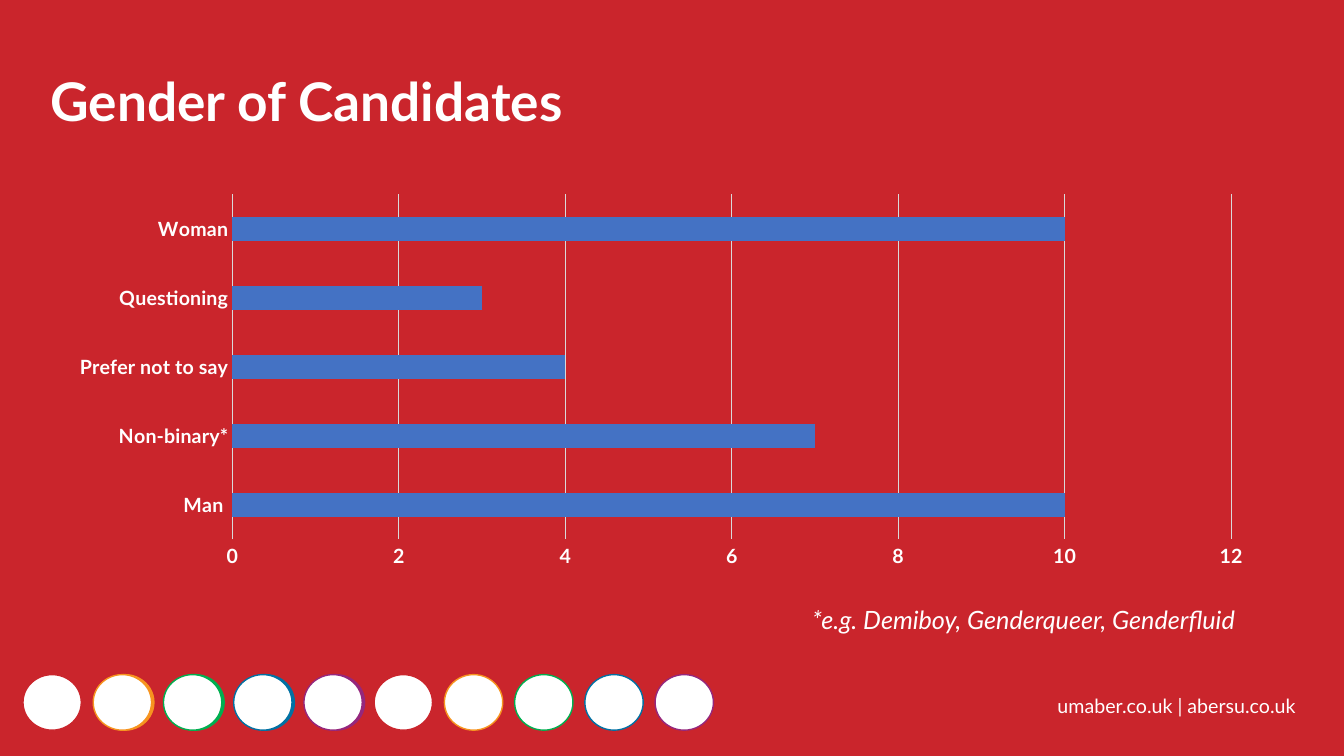
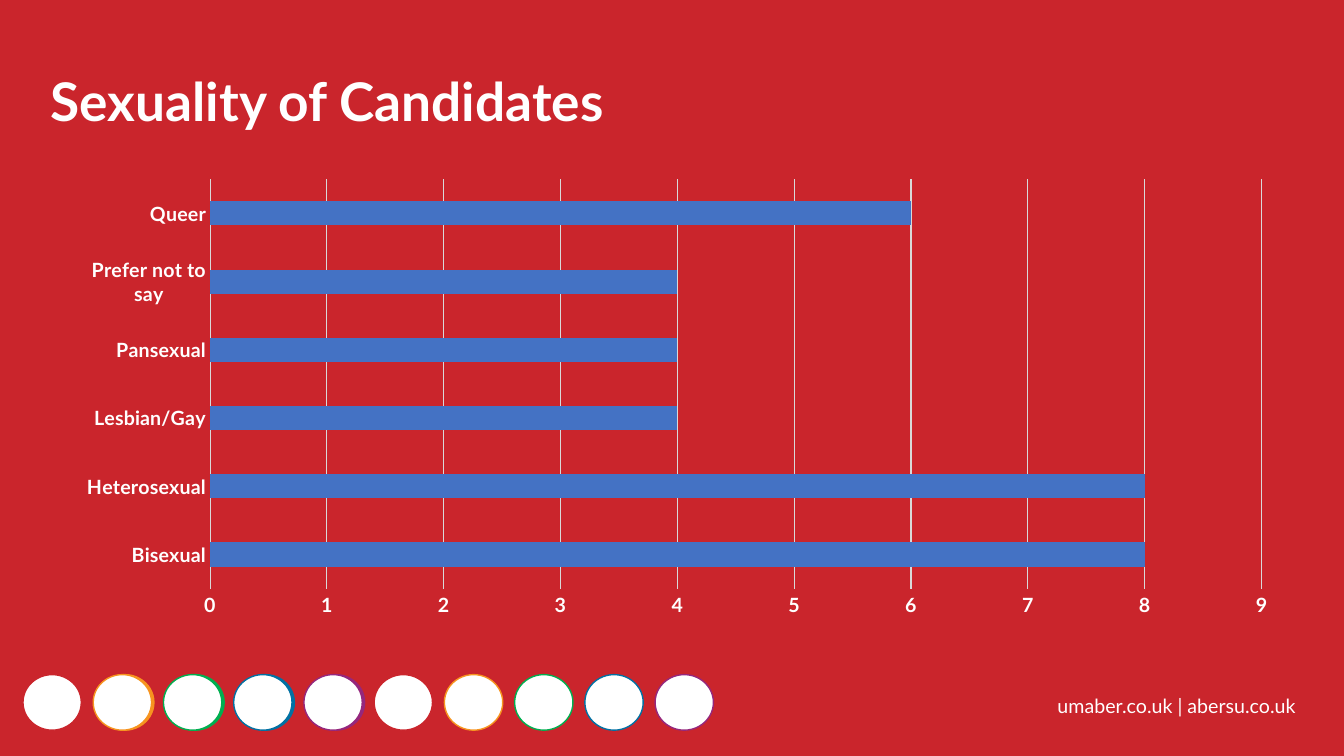
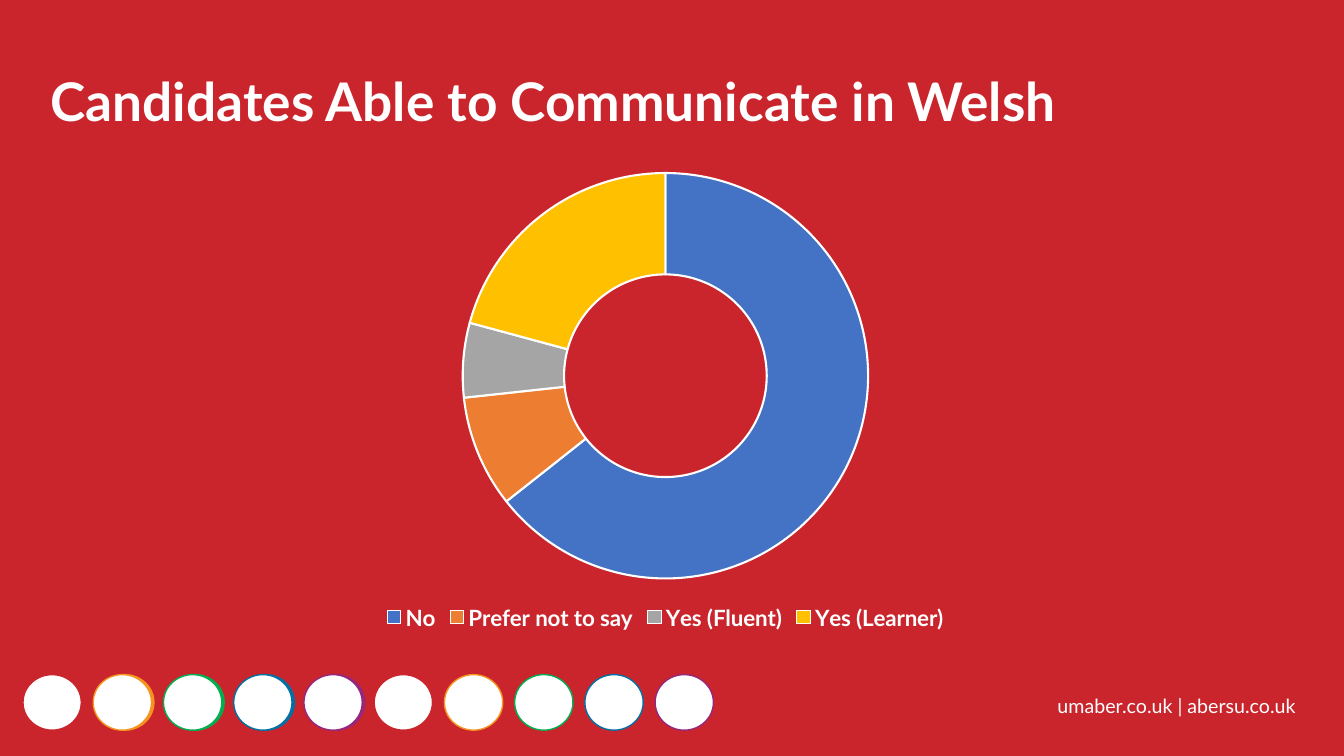
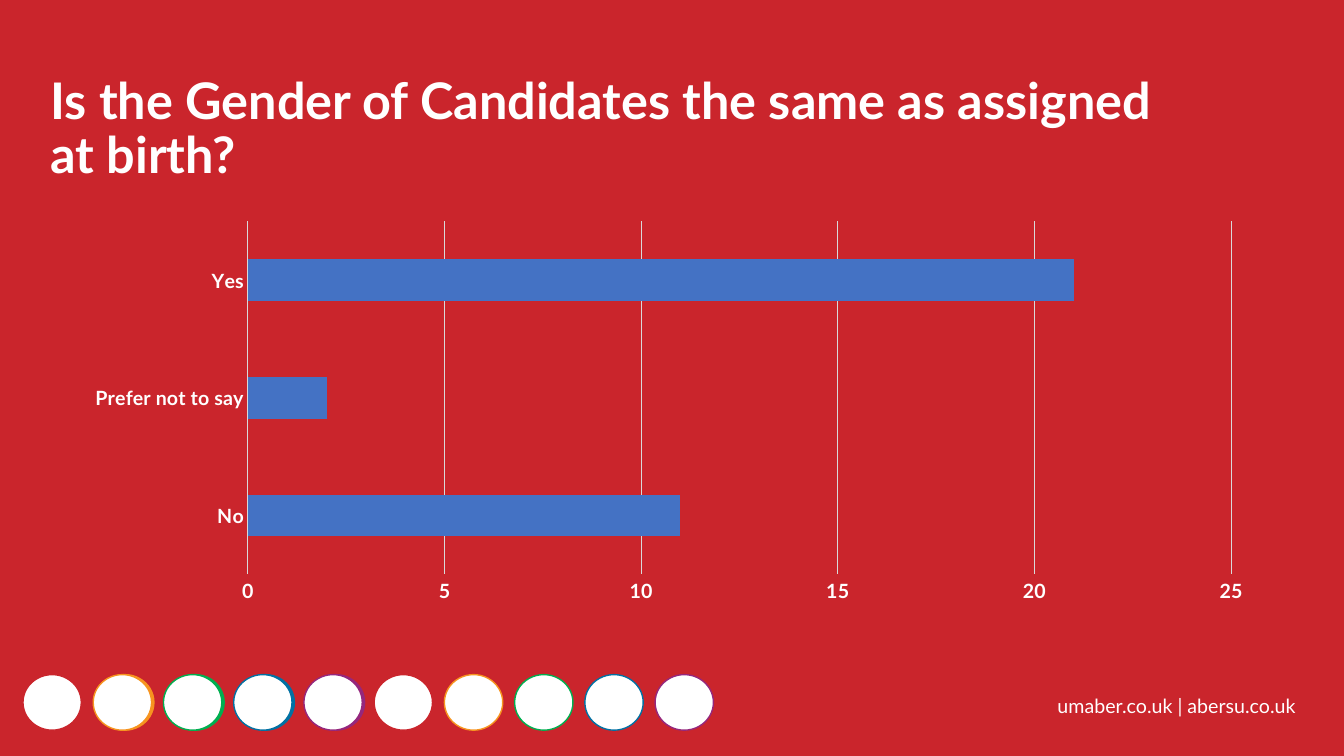
from pptx import Presentation
from pptx.chart.data import CategoryChartData
from pptx.dml.color import RGBColor
from pptx.enum import chart as kinds, shapes, text
from pptx.util import Cm, Pt

RED, WHITE, BLUE, GRID = "CA252C", "FFFFFF", "4472C4", "D9D9D9"
RAINBOW = [RED, "F7941F", "00AF50", "0171A3", "95277D"]
SLICES = [BLUE, "ED7D31", "A5A5A5", "FFC000"]
FONT = "Lato"


def rgb(value):
    return RGBColor.from_string(value)


def paint(fill, colour):
    fill.solid()
    fill.fore_color.rgb = rgb(colour)


def outline(line, colour, width):
    line.color.rgb = rgb(colour)
    line.width = Pt(width)


def style_font(font, size, bold=False, italic=False):
    font.name = FONT
    font.size = Pt(size)
    font.bold = bold
    font.italic = italic
    font.color.rgb = rgb(WHITE)


def add_label(page, box, words, size, italic=False):
    label = page.shapes.add_textbox(*map(Cm, box))
    frame = label.text_frame
    frame.word_wrap = True
    frame.text = words
    style_font(frame.paragraphs[0].runs[0].font, size, italic=italic)


def add_circles(page, left, top, fills, lines):
    pitch, width, height = 1.77, 1.47, 1.4
    for index, (fill, line) in enumerate(zip(fills, lines)):
        circle = page.shapes.add_shape(
            shapes.MSO_SHAPE.OVAL, Cm(left + index * pitch), Cm(top), Cm(width), Cm(height))
        circle.shadow.inherit = False
        paint(circle.fill, fill)
        outline(circle.line, line, 1)


def prepare_layout(layout, page):
    paint(layout.background.fill, RED)
    for holder in list(layout.placeholders):
        if holder.placeholder_format.type != shapes.PP_PLACEHOLDER.TITLE:
            holder.element.getparent().remove(holder.element)
    add_circles(page, 0.64, 17, RAINBOW, RAINBOW)
    add_circles(page, 0.58, 17, [WHITE] * 10, RAINBOW * 2)
    add_label(page, (26.4, 17.37, 7.11, 0.86), "umaber.co.uk | abersu.co.uk", 14)
    for shape in list(page.shapes):
        if not shape.is_placeholder:
            layout.shapes.element.append(shape.element)


def set_title(page, words, width, size):
    title = page.shapes.title
    title.left, title.top, title.width, title.height = map(Cm, (1.02, 1.78, width, 2.24))
    frame = title.text_frame
    frame.word_wrap = True
    frame.auto_size = text.MSO_AUTO_SIZE.NONE
    frame.vertical_anchor = text.MSO_ANCHOR.TOP
    frame.text = words
    para = frame.paragraphs[0]
    para.alignment = text.PP_ALIGN.LEFT
    para.line_spacing = 0.9
    style_font(para.runs[0].font, size, bold=True)


def add_chart(page, box, kind, values, size):
    data = CategoryChartData()
    data.categories = list(values)
    data.add_series("Series 1", list(values.values()))
    chart = page.shapes.add_chart(kind, *map(Cm, box), data).chart
    chart.has_title = False
    chart.has_legend = False
    style_font(chart.font, size, bold=True)
    return chart


def add_bars(page, box, values):
    chart = add_chart(page, box, kinds.XL_CHART_TYPE.BAR_CLUSTERED, values, 14)
    plot = chart.plots[0]
    plot.gap_width = 182
    plot.vary_by_categories = False
    paint(plot.series[0].format.fill, BLUE)
    for axis in (chart.category_axis, chart.value_axis):
        axis.major_tick_mark = axis.minor_tick_mark = kinds.XL_TICK_MARK.NONE
        style_font(axis.tick_labels.font, 14, bold=True)
    outline(chart.category_axis.format.line, GRID, 0.75)
    chart.value_axis.minimum_scale = 0
    chart.value_axis.format.line.fill.background()
    chart.value_axis.has_major_gridlines = True
    outline(chart.value_axis.major_gridlines.format.line, GRID, 0.75)


def add_ring(page, box, values):
    chart = add_chart(page, box, kinds.XL_CHART_TYPE.DOUGHNUT, values, 16)
    plot = chart.plots[0]
    plot.vary_by_categories = True
    for hole in chart.element.xpath(".//c:holeSize"):
        hole.set("val", "75")
    for index, colour in enumerate(SLICES):
        piece = plot.series[0].points[index].format
        paint(piece.fill, colour)
        outline(piece.line, WHITE, 1.5)
    chart.has_legend = True
    chart.legend.position = kinds.XL_LEGEND_POSITION.BOTTOM
    chart.legend.include_in_layout = False
    style_font(chart.legend.font, 16, bold=True)


SLIDES = [
    ("Gender of Candidates", 23.16, 38, add_bars, (1.4, 4.7, 30.53, 9.8),
     {"Man ": 10, "Non-binary*": 7, "Prefer not to say": 4, "Questioning": 3, "Woman": 10}),
    ("Sexuality of Candidates", 23.16, 38, add_bars, (1.57, 4.29, 30.99, 11.48),
     {"Bisexual": 8, "Heterosexual": 8, "Lesbian/Gay": 4, "Pansexual": 4,
      "Prefer not to say": 4, "Queer": 6}),
    ("Candidates Able to Communicate in Welsh", 29, 38, add_ring, (1.02, 4.01, 31.5, 11.99),
     {"No": 65, "Prefer not to say": 9, "Yes (Fluent)": 6, "Yes (Learner)": 21}),
    ("Is the Gender of Candidates the same as assigned at birth?", 29, 36, add_bars,
     (1.8, 5.38, 30.12, 10), {"No": 11, "Prefer not to say": 2, "Yes": 21}),
]


def main():
    deck = Presentation()
    deck.slide_width, deck.slide_height = Cm(33.87), Cm(19.05)
    layout = deck.slide_layouts.get_by_name("Title Only")
    pages = [deck.slides.add_slide(layout) for _ in SLIDES]
    prepare_layout(layout, pages[0])
    for page, (title, width, size, draw, box, values) in zip(pages, SLIDES):
        set_title(page, title, width, size)
        draw(page, box, values)
    add_label(pages[0], (20.22, 15.11, 12.75, 1.02),
              "*e.g. Demiboy, Genderqueer, Genderfluid", 18, italic=True)
    deck.save("out.pptx")


if __name__ == "__main__":
    main()
